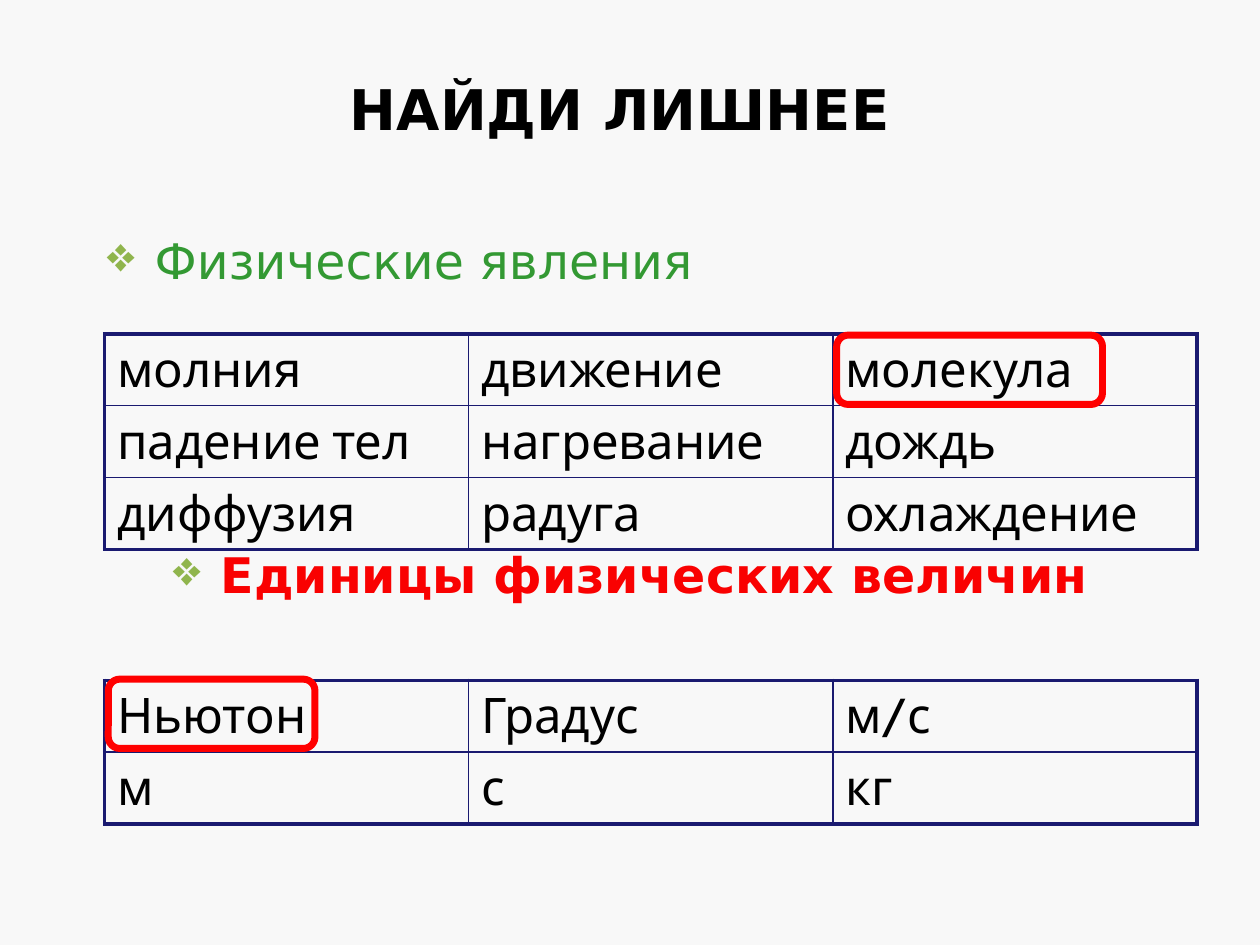
"""Build the "find the odd one out" physics slide."""
from lxml import etree
from pptx import Presentation
from pptx.dml.color import RGBColor
from pptx.enum import shapes, text
from pptx.oxml.ns import qn
from pptx.util import Inches, Pt

COLORS = {"background": "F8F8F8", "text": "000000", "phenomena": "339933", "units": "F90101",
          "bullet": "90B54D", "border": "1A1A70", "answer": "FF0000"}


def write(frame, wording, size=28, font="DejaVu Sans", color="text", bold=False,
          align=text.PP_ALIGN.LEFT, bullet=None):
    frame.word_wrap = True
    paragraph = frame.paragraphs[0]
    paragraph.alignment = align
    run = paragraph.add_run()
    run.text = wording
    run.font.size = Pt(size)
    run.font.name = font
    run.font.bold = bold
    run.font.color.rgb = RGBColor.from_string(COLORS[color])
    if bullet:
        props = paragraph._p.get_or_add_pPr()
        props.set("marL", str(Inches(0.38)))
        props.set("indent", str(Inches(-0.38)))
        tint = etree.SubElement(props, qn("a:buClr"))
        etree.SubElement(tint, qn("a:srgbClr"), val=COLORS["bullet"])
        etree.SubElement(props, qn("a:buChar"), char=bullet)


def draw_borders(cell, widths):
    props = cell._tc.get_or_add_tcPr()
    for position, (side, width) in enumerate(widths.items()):
        line = etree.Element(qn(f"a:{side}"), w=str(Pt(width)))
        fill = etree.SubElement(line, qn("a:solidFill"))
        etree.SubElement(fill, qn("a:srgbClr"), val=COLORS["border"])
        props.insert(position, line)


prs = Presentation()
prs.slide_width, prs.slide_height = Inches(10), Inches(7.5)
slide = prs.slides.add_slide(prs.slide_layouts[6])
slide.background.fill.solid()
slide.background.fill.fore_color.rgb = RGBColor.from_string(COLORS["background"])

title = slide.shapes.add_textbox(Inches(0.67), Inches(0.33), Inches(8.5), Inches(1.05))
title.text_frame.vertical_anchor = text.MSO_ANCHOR.MIDDLE
write(title.text_frame, "НАЙДИ ЛИШНЕЕ", size=32, bold=True, align=text.PP_ALIGN.CENTER)

headings = [
    (1.78, "Физические явления", {"color": "phenomena"}),
    (4.27, "Единицы физических величин",
     {"color": "units", "bold": True, "align": text.PP_ALIGN.CENTER}),
]
for top, wording, style in headings:
    heading = slide.shapes.add_textbox(Inches(0.75), Inches(top), Inches(8.5), Inches(0.55))
    write(heading.text_frame, wording, bullet="❖", **style)

word_grids = [
    (2.65, [["молния", "движение", "молекула"],
            ["падение тел", "нагревание", "дождь"],
            ["диффузия", "радуга", "охлаждение"]]),
    (5.4, [["Ньютон", "Градус", "м/с"],
           ["м", "с", "кг"]]),
]
for top, words in word_grids:
    last_row, last_col = len(words) - 1, len(words[0]) - 1
    grid = slide.shapes.add_table(len(words), len(words[0]), Inches(0.83), Inches(top),
                                  Inches(8.66), Inches(0.57 * len(words))).table
    grid.first_row = grid.horz_banding = False
    for column in grid.columns:
        column.width = Inches(2.89)
    for r, row in enumerate(words):
        grid.rows[r].height = Inches(0.57)
        for c, word in enumerate(row):
            cell = grid.cell(r, c)
            cell.fill.background()
            write(cell.text_frame, word, font="Cabin")
            outer = {"lnL": c == 0, "lnR": c == last_col, "lnT": r == 0, "lnB": r == last_row}
            draw_borders(cell, {side: 2.25 if edge else 1 for side, edge in outer.items()})

for left, top, width in [(6.64, 2.66, 2.11), (0.86, 5.39, 1.64)]:
    answer = slide.shapes.add_shape(shapes.MSO_SHAPE.ROUNDED_RECTANGLE, Inches(left), Inches(top),
                                    Inches(width), Inches(0.55))
    answer.shadow.inherit = False
    answer.fill.background()
    answer.line.color.rgb = RGBColor.from_string(COLORS["answer"])
    answer.line.width = Pt(4)

prs.save("out.pptx")
